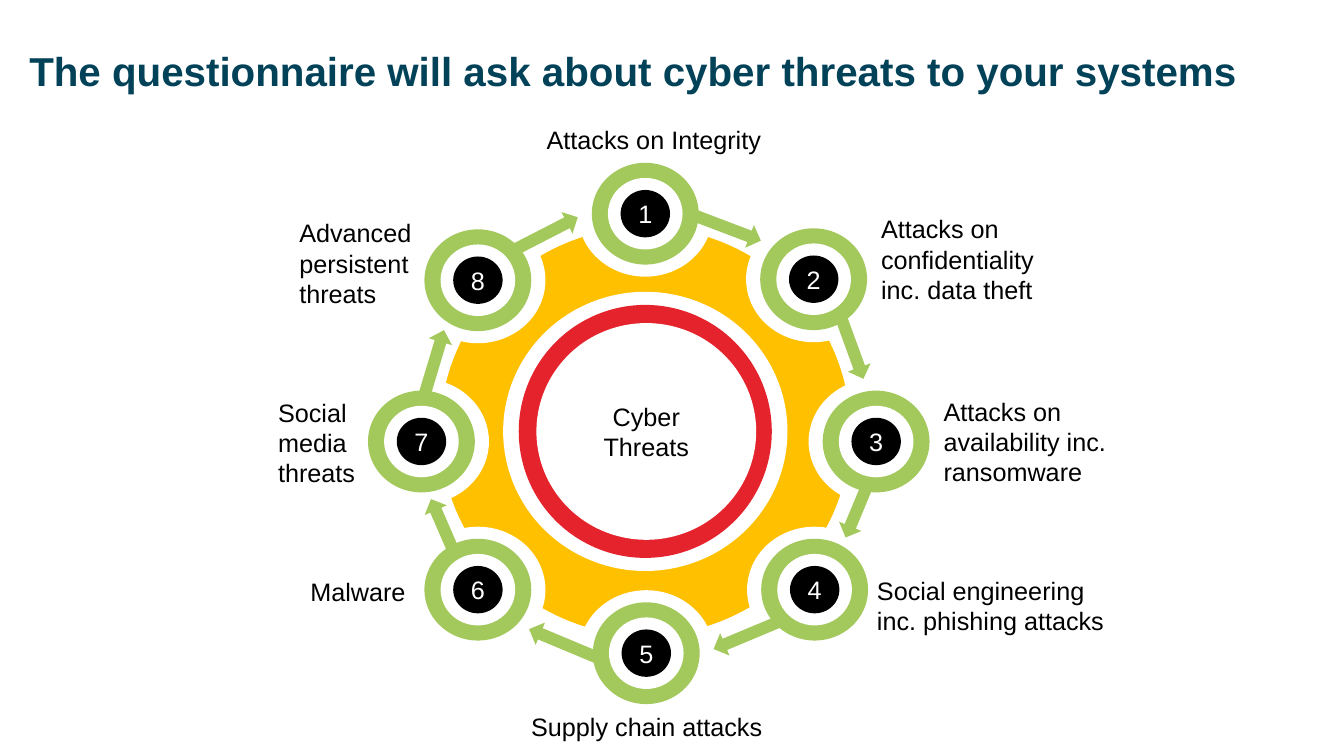
from dataclasses import dataclass

from pptx import Presentation
from pptx.dml.color import RGBColor
from pptx.enum.shapes import MSO_SHAPE as Shape
from pptx.enum.text import MSO_ANCHOR as Anchor, MSO_AUTO_SIZE as AutoSize, PP_ALIGN as Align
from pptx.util import Inches, Pt


@dataclass(frozen=True)
class Theme:
    font: str = "Arial"
    title_size: float = 28.8
    body_size: float = 18
    navy: str = "024259"
    amber: str = "FFC000"
    red: str = "E5232C"
    green: str = "A3C95C"
    black: str = "000000"
    white: str = "FFFFFF"


theme = Theme()
deck = Presentation()
deck.slide_width, deck.slide_height = Inches(13.33), Inches(7.5)
slide = deck.slides.add_slide(deck.slide_layouts[6])


def add_centred(kind, x, y, width, height, color, rotation=0):
    """Add a plain filled shape around the centre x, y."""
    shape = slide.shapes.add_shape(kind, Inches(x - width / 2), Inches(y - height / 2),
                                   Inches(width), Inches(height))
    shape.shadow.inherit = False
    shape.fill.solid()
    shape.fill.fore_color.rgb = RGBColor.from_string(color)
    shape.line.fill.background()
    shape.rotation = rotation
    return shape


def write(shape, text, color=theme.black, align=Align.LEFT, size=theme.body_size, bold=False):
    """Put one styled paragraph into a shape or text box."""
    shape.text_frame.word_wrap = True
    paragraph = shape.text_frame.paragraphs[0]
    paragraph.alignment = align
    run = paragraph.add_run()
    run.text = text
    for name, value in {"name": theme.font, "size": Pt(size), "bold": bold}.items():
        setattr(run.font, name, value)
    run.font.color.rgb = RGBColor.from_string(color)
    return paragraph


# Title
title = slide.shapes.add_textbox(Inches(0.29), Inches(0.4), Inches(12.38), Inches(0.66))
heading = write(title, "The questionnaire will ask about cyber threats to your systems",
                theme.navy, size=theme.title_size, bold=True)
heading.line_spacing = 0.9
title_format = {"vertical_anchor": Anchor.MIDDLE, "margin_left": 0, "margin_top": 0,
                "margin_right": 0, "margin_bottom": 0}
for name, value in title_format.items():
    setattr(title.text_frame, name, value)

# Threats 1 to 8, clockwise: centre x, y; label, left, top, width, height, alignment
threats = [
    (6.4, 2.12, "Attacks on Integrity", 5.11, 1.18, 2.75, 0.4, Align.CENTER),
    (8.07, 2.77, "Attacks on confidentiality inc. data theft", 8.64, 2.07, 1.85, 1.01, Align.LEFT),
    (8.69, 4.38, "Attacks on availability inc. ransomware", 9.26, 3.88, 1.85, 1.01, Align.LEFT),
    (8.08, 5.85, "Social engineering inc. phishing attacks", 8.6, 5.66, 2.57, 0.71, Align.LEFT),
    (6.41, 6.48, "Supply chain attacks", 5.13, 7.01, 2.57, 0.4, Align.CENTER),
    (4.74, 5.85, "Malware", 2.98, 5.67, 1.67, 0.4, Align.LEFT),
    (4.18, 4.38, "Social media threats", 2.66, 3.89, 1.07, 1.01, Align.LEFT),
    (4.74, 2.78, "Advanced persistent threats", 2.87, 2.11, 1.91, 1.01, Align.LEFT),
]

# Wheel with a notch behind every threat
add_centred(Shape.OVAL, 6.4, 4.28, 4.07, 4.05, theme.amber)
for x, y, *_ in threats:
    add_centred(Shape.OVAL, x, y, 1.34, 1.25, theme.white)

# Hub
add_centred(Shape.OVAL, 6.4, 4.28, 2.82, 2.77, theme.white)
add_centred(Shape.OVAL, 6.4, 4.28, 2.51, 2.51, theme.red)
hub = add_centred(Shape.OVAL, 6.41, 4.28, 2.18, 2.15, theme.white)
hub.text_frame.vertical_anchor = Anchor.MIDDLE
write(hub, "Cyber Threats", align=Align.CENTER)

# Numbered rings and their labels
for number, (x, y, threat, left, top, width, height, align) in enumerate(threats, start=1):
    add_centred(Shape.OVAL, x, y, 1.06, 1.01, theme.green)
    add_centred(Shape.OVAL, x, y, 0.74, 0.71, theme.white)
    dot = add_centred(Shape.OVAL, x, y, 0.49, 0.47, theme.black)
    dot.text_frame.vertical_anchor = Anchor.MIDDLE
    write(dot, str(number), theme.white, Align.CENTER)

    label = slide.shapes.add_textbox(Inches(left), Inches(top), Inches(width), Inches(height))
    label.text_frame.auto_size = AutoSize.SHAPE_TO_FIT_TEXT
    write(label, threat, align=align)

# Arrows from each threat to the next: centre x, y, length, rotation
arrows = [
    (7.21, 2.26, 0.72, 20.8),
    (8.44, 3.42, 0.72, 70),
    (8.5, 5.06, 0.59, 112.6),
    (7.41, 6.3, 0.72, 157.3),
    (5.58, 6.38, 0.72, 202.7),
    (4.4, 5.24, 0.63, 246.5),
    (4.3, 3.62, 0.72, 286.7),
    (5.41, 2.32, 0.72, 332.8),
]
for x, y, length, rotation in arrows:
    add_centred(Shape.RIGHT_ARROW, x, y, length, 0.24, theme.green, rotation)

deck.save("out.pptx")
